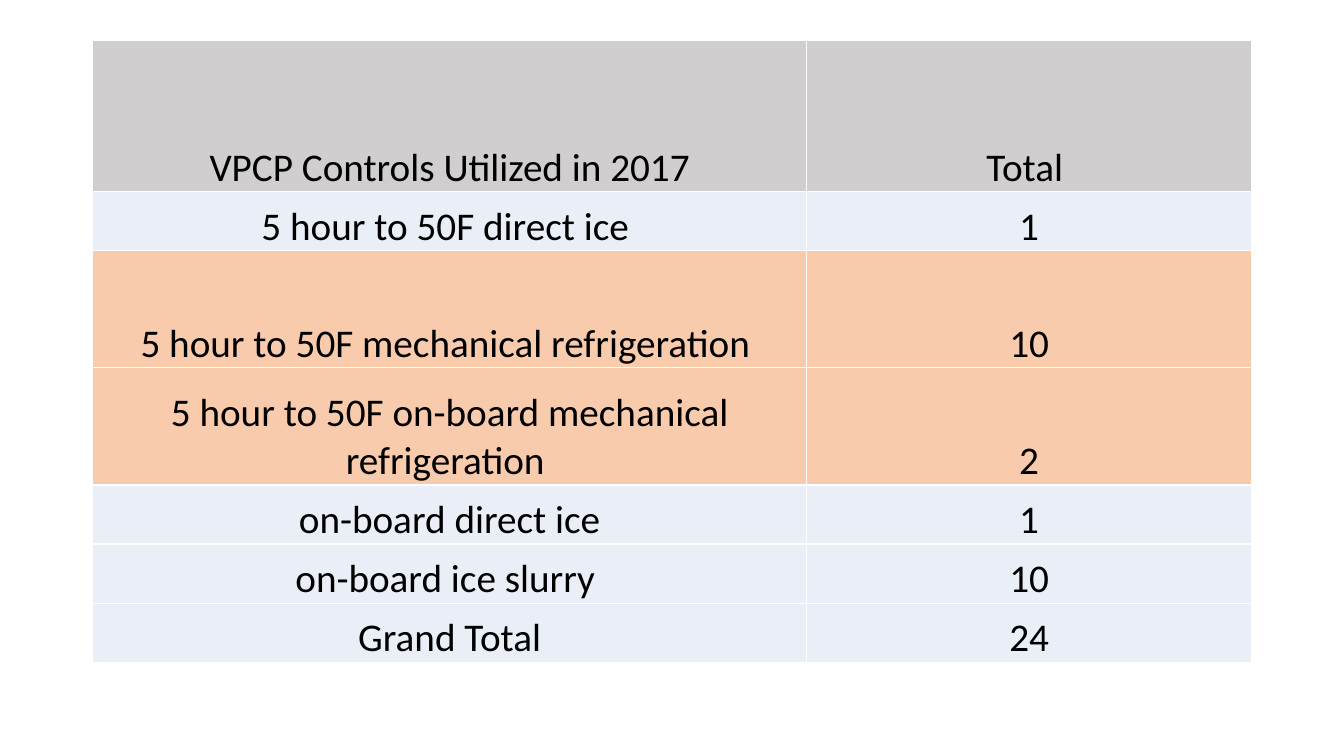
"""Build a slide with a table of the VPCP controls utilized in 2017."""
from dataclasses import dataclass

from lxml import etree
from pptx import Presentation
from pptx import util as u
from pptx.dml.color import RGBColor
from pptx.enum import text
from pptx.oxml import ns
from pptx.table import _Cell

BLACK = RGBColor(0x00, 0x00, 0x00)
WHITE = RGBColor(0xFF, 0xFF, 0xFF)
GREY = RGBColor(0xD0, 0xCE, 0xCE)
PALE_BLUE = RGBColor(0xEA, 0xEF, 0xF7)
ORANGE = RGBColor(0xF8, 0xCB, 0xAD)

HEADER_HEIGHT = u.Cm(3.81)
SINGLE_HEIGHT = u.Cm(1.49)
DOUBLE_HEIGHT = u.Cm(2.95)
COLUMN_WIDTHS = (u.Cm(17.98), u.Cm(11.23))
TABLE_LEFT = u.Cm(2.34)
TABLE_TOP = u.Cm(1.02)
CELL_MARGIN = u.Cm(0.03)


@dataclass(frozen=True)
class ControlRow:
    label: str
    total: str
    fill: RGBColor = PALE_BLUE
    height: int = SINGLE_HEIGHT


ROWS = (
    ControlRow("VPCP Controls Utilized in 2017", "Total ", GREY, HEADER_HEIGHT),
    ControlRow("5 hour to 50F direct ice ", "1"),
    ControlRow("5 hour to 50F mechanical refrigeration ", "10", ORANGE, DOUBLE_HEIGHT),
    ControlRow("5 hour to 50F on-board mechanical refrigeration ", "2", ORANGE, DOUBLE_HEIGHT),
    ControlRow("on-board direct ice", "1"),
    ControlRow("on-board ice slurry ", "10"),
    ControlRow("Grand Total", "24"),
)


def add_borders(cell: _Cell, color: RGBColor, width: int) -> None:
    properties = cell._tc.get_or_add_tcPr()
    for side in ("a:lnL", "a:lnR", "a:lnT", "a:lnB"):
        line = etree.SubElement(properties, ns.qn(side), w=str(width))
        solid = etree.SubElement(line, ns.qn("a:solidFill"))
        etree.SubElement(solid, ns.qn("a:srgbClr"), val=str(color))


def write_text(cell: _Cell, content: str, *, size: int = 28, font: str = "Calibri",
               color: RGBColor = BLACK, bold: bool = False) -> None:
    paragraph = cell.text_frame.paragraphs[0]
    paragraph.alignment = text.PP_ALIGN.CENTER
    run = paragraph.add_run()
    run.text = content
    run.font.size = u.Pt(size)
    run.font.name = font
    run.font.bold = bold
    run.font.color.rgb = color


def format_cell(cell: _Cell, fill: RGBColor) -> None:
    add_borders(cell, WHITE, u.Pt(1))
    cell.fill.solid()
    cell.fill.fore_color.rgb = fill
    cell.vertical_anchor = text.MSO_ANCHOR.BOTTOM
    cell.margin_left = cell.margin_right = cell.margin_top = CELL_MARGIN
    cell.margin_bottom = 0


def main() -> None:
    presentation = Presentation()
    presentation.slide_width = u.Cm(33.87)
    presentation.slide_height = u.Cm(19.05)
    slide = presentation.slides.add_slide(presentation.slide_layouts[6])
    shape = slide.shapes.add_table(
        len(ROWS), len(COLUMN_WIDTHS), TABLE_LEFT, TABLE_TOP,
        sum(COLUMN_WIDTHS), sum(row.height for row in ROWS))
    table = shape.table
    for column, width in zip(table.columns, COLUMN_WIDTHS):
        column.width = width
    for table_row, row in zip(table.rows, ROWS):
        table_row.height = row.height
        for cell, content in zip(table_row.cells, (row.label, row.total)):
            format_cell(cell, row.fill)
            write_text(cell, content)
    presentation.save("out.pptx")


if __name__ == "__main__":
    main()
